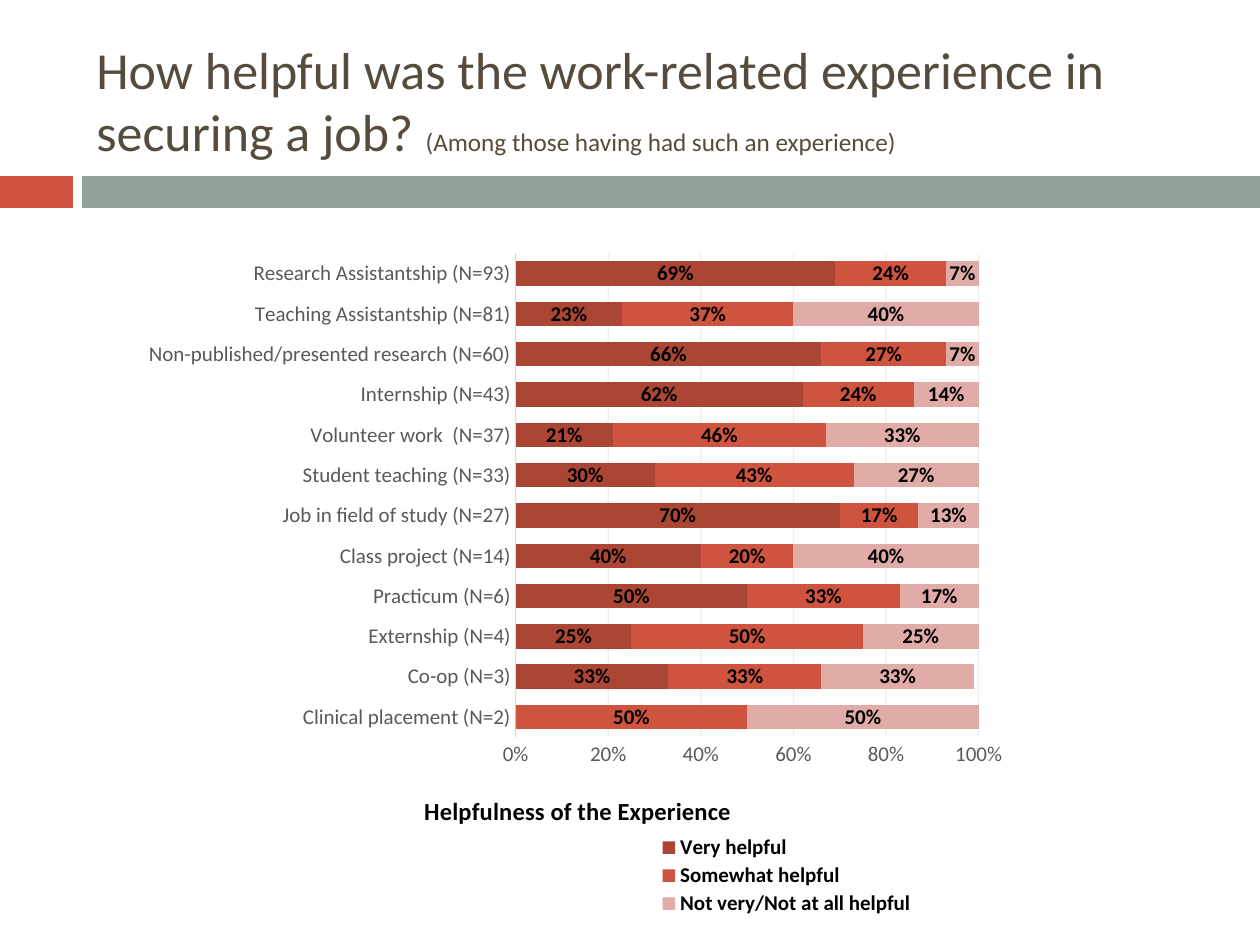
from lxml import etree
from pptx import Presentation
from pptx.chart.data import CategoryChartData
from pptx.dml.color import RGBColor
from pptx.enum.chart import XL_CHART_TYPE as Chart, XL_LEGEND_POSITION as Legend
from pptx.enum.chart import XL_LABEL_POSITION as Label, XL_TICK_MARK as Tick
from pptx.enum.shapes import MSO_SHAPE as Shape
from pptx.enum.text import MSO_ANCHOR as Anchor
from pptx.oxml.ns import qn
from pptx.util import Emu, Pt

PX = 914400 / 126
FONT = "Calibri"
BROWN, RED, SAGE, GREY = "564B3C", "CF543F", "93A299", "595959"
AXIS_TEXT = {"size": Pt(12), "bold": False}
BOLD_TEXT = {"size": Pt(12), "bold": True}

CATEGORIES = [
    "Clinical placement (N=2)", "Co-op (N=3)", "Externship (N=4)",
    "Practicum (N=6)", "Class project (N=14)", "Job in field of study (N=27)",
    "Student teaching (N=33)", "Volunteer work  (N=37)", "Internship (N=43)",
    "Non-published/presented research (N=60)",
    "Teaching Assistantship (N=81)", "Research Assistantship (N=93)",
]
RATINGS = [
    ("Very helpful", "AC4634",
     [0, .33, .25, .5, .4, .7, .3, .21, .62, .66, .23, .69]),
    ("Somewhat helpful", RED,
     [.5, .33, .5, .33, .2, .17, .43, .46, .24, .27, .37, .24]),
    ("Not very/Not at all helpful", "E1ABA7",
     [.5, .33, .25, .17, .4, .13, .27, .33, .14, .07, .4, .07]),
]


def px(*lengths):
    return [Emu(round(length * PX)) for length in lengths]


def rgb(code):
    return RGBColor.from_string(code)


def style_font(font, color, values):
    font.name = FONT
    font.color.rgb = rgb(color)
    for name, value in values.items():
        setattr(font, name, value)


def place(parent, index, inner=False, **fractions):
    """Give a chart part a manual layout, in fractions of the chart."""
    for old in parent.findall(qn("c:layout")):
        parent.remove(old)
    layout = etree.Element(qn("c:layout"))
    manual = etree.SubElement(layout, qn("c:manualLayout"))
    settings = {"layoutTarget": "inner"} if inner else {}
    settings.update(xMode="edge", yMode="edge", **fractions)
    for name, value in settings.items():
        etree.SubElement(manual, qn(f"c:{name}")).set("val", str(value))
    parent.insert(index, layout)


class SlideBuilder:
    def __init__(self, deck):
        self.page = deck.slides.add_slide(deck.slide_layouts[6])

    def band(self, left, top, width, height, color):
        box = self.page.shapes.add_shape(
            Shape.RECTANGLE, *px(left, top, width, height))
        box.shadow.inherit = False
        box.fill.solid()
        box.fill.fore_color.rgb = rgb(color)
        box.line.fill.background()

    def text(self, left, top, width, height, spans):
        frame = self.page.shapes.add_textbox(
            *px(left, top, width, height)).text_frame
        frame.word_wrap = True
        frame.vertical_anchor = Anchor.MIDDLE
        para = frame.paragraphs[0]
        for words, size in spans:
            span = para.add_run()
            span.text = words
            style_font(span.font, BROWN, {"size": Pt(size)})

    def stacked_bars(self, left, top, width, height, categories, ratings):
        data = CategoryChartData(number_format="0%")
        data.categories = categories
        for name, _, values in ratings:
            data.add_series(name, values)
        chart = self.page.shapes.add_chart(
            Chart.BAR_STACKED, *px(left, top, width, height), data).chart
        chart.has_title = False
        style_font(chart.font, "000000", {"size": Pt(10)})
        plot = chart.plots[0]
        plot.gap_width, plot.overlap = 65, 100
        plot.vary_by_categories = False
        for series, (_, color, values) in zip(plot.series, ratings):
            self.bar_series(series, color, values)
        self.axes(chart)
        self.legend(chart)
        plot_area = chart.element.find(".//" + qn("c:plotArea"))
        place(plot_area, 0, inner=True, x=.462, y=.028, w=.492, h=.693)

    def bar_series(self, series, color, values):
        series.format.fill.solid()
        series.format.fill.fore_color.rgb = rgb(color)
        labels = series.data_labels
        style_font(labels.font, "000000", BOLD_TEXT)
        formats = {"show_value": True, "number_format": "0%",
                   "number_format_is_linked": False, "position": Label.CENTER}
        for name, value in formats.items():
            setattr(labels, name, value)
        # Bars of zero length carry no label
        zeros = [i for i, value in enumerate(values) if value == 0]
        for position, point in enumerate(zeros):
            hidden = etree.Element(qn("c:dLbl"))
            etree.SubElement(hidden, qn("c:idx")).set("val", str(point))
            etree.SubElement(hidden, qn("c:delete")).set("val", "1")
            labels._element.insert(position, hidden)

    def axes(self, chart):
        names, scale = chart.category_axis, chart.value_axis
        for axis in (names, scale):
            axis.major_tick_mark = axis.minor_tick_mark = Tick.NONE
            style_font(axis.tick_labels.font, GREY, AXIS_TEXT)
        names.format.line.color.rgb = rgb("D9D9D9")
        names.format.line.width = Pt(.75)

        scale.minimum_scale, scale.maximum_scale, scale.major_unit = 0, 1, .2
        scale.tick_labels.number_format = "0%"
        scale.tick_labels.number_format_is_linked = False
        scale.format.line.fill.background()
        grid = scale.major_gridlines.format.line
        grid.color.rgb = rgb("BFBFBF")
        grid.width = Pt(.75)
        tint = scale.major_gridlines._xAx.find(
            qn("c:majorGridlines") + "//" + qn("a:srgbClr"))
        etree.SubElement(tint, qn("a:alpha")).set("val", "25000")

        title = scale.axis_title
        title.text_frame.text = "Helpfulness of the Experience"
        span = title.text_frame.paragraphs[0].runs[0]
        style_font(span.font, "000000", {"size": Pt(14), "bold": True})
        place(title._element, 1, x=.36, y=.796)

    def legend(self, chart):
        chart.has_legend = True
        chart.legend.position = Legend.BOTTOM
        chart.legend.include_in_layout = False
        style_font(chart.legend.font, "000000", BOLD_TEXT)
        place(chart.legend._element, 1, x=.61, y=.857, w=.28, h=.125)


def main():
    deck = Presentation()
    deck.slide_width, deck.slide_height = px(1260, 945)
    slide = SlideBuilder(deck)

    # Divider under the title
    slide.band(0, 176, 73, 32, RED)
    slide.band(82, 176, 1178, 32, SAGE)

    # Title
    slide.text(84, 32, 1124, 136, [
        ("How helpful was the work-related experience in securing a job? ", 29.7),
        ("(Among those having had such an experience)", 14.4),
    ])

    # Ratings for each kind of experience
    slide.stacked_bars(81, 234, 941, 698, CATEGORIES, RATINGS)
    deck.save("out.pptx")


if __name__ == "__main__":
    main()
